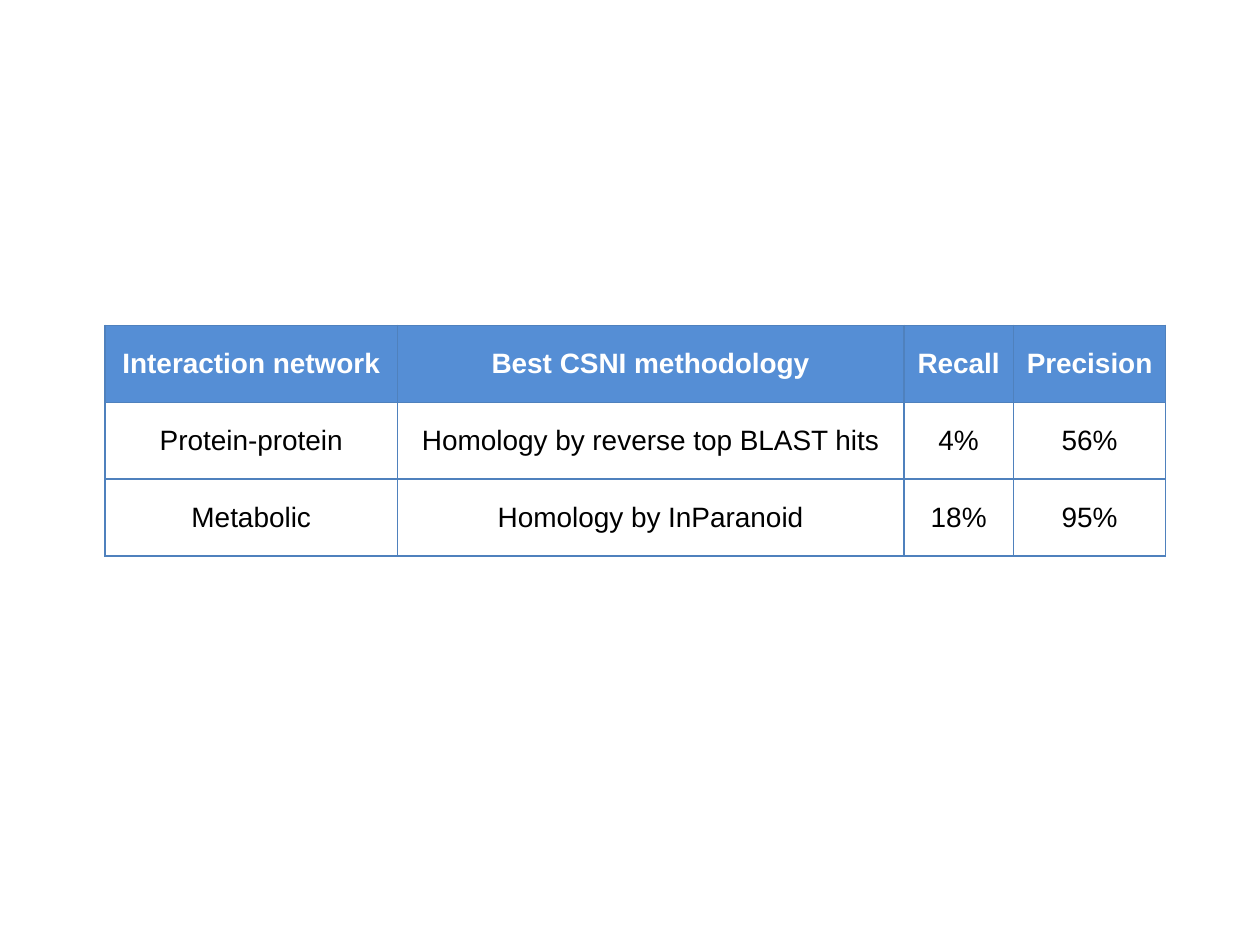
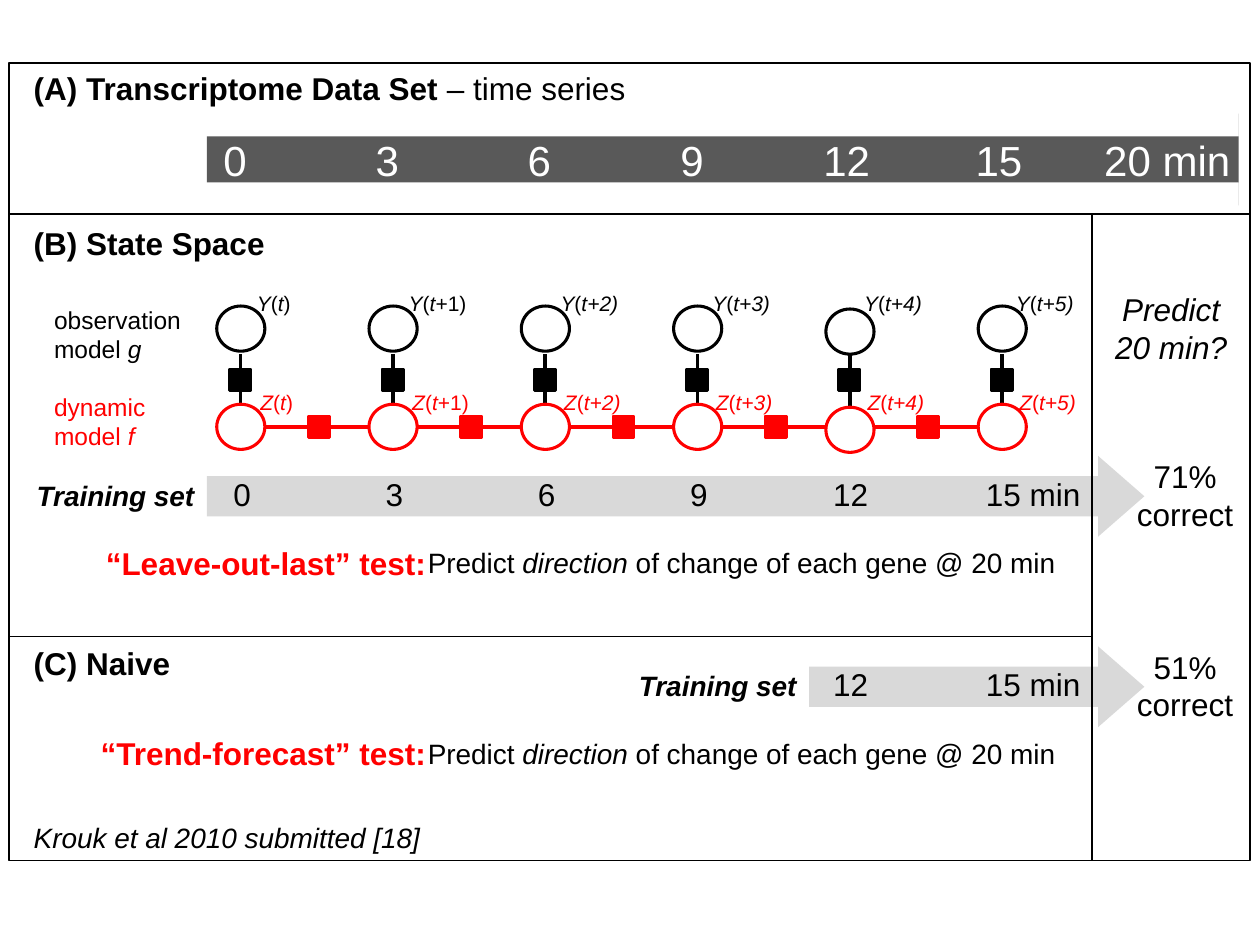
from lxml import etree
from pptx import Presentation
from pptx.dml.color import RGBColor
from pptx.enum.shapes import MSO_CONNECTOR, MSO_SHAPE
from pptx.enum.text import MSO_ANCHOR, PP_ALIGN
from pptx.oxml.ns import qn
from pptx.util import Cm, Pt

RECT, OVAL, ARROW = MSO_SHAPE.RECTANGLE, MSO_SHAPE.OVAL, MSO_SHAPE.RIGHT_ARROW
STRAIGHT = MSO_CONNECTOR.STRAIGHT
LEFT, CENTER, RIGHT = PP_ALIGN.LEFT, PP_ALIGN.CENTER, PP_ALIGN.RIGHT
MIDDLE = MSO_ANCHOR.MIDDLE

FONT = "Arial"
BLACK, WHITE, RED = "000000", "FFFFFF", "FF0000"
HEADER_BLUE, BORDER_BLUE = "558ED5", "4F81BD"
DARK_GREY, LIGHT_GREY = "595959", "D9D9D9"

RESULTS = [
    ["Interaction network", "Best CSNI methodology", "Recall", "Precision"],
    ["Protein-protein", "Homology by reverse top BLAST hits", "4%", "56%"],
    ["Metabolic", "Homology by InParanoid", "18%", "95%"],
]
COLUMN_WIDTHS = [5.89, 10.21, 2.21, 3.07]
ROW_HEIGHT = 1.55

FIRST_NODE, STEP, NODE_COUNT = 4.85, 3.07, 6
NODE_DROP = {4: 0.06}
OBSERVED_Y, HIDDEN_Y = 6.63, 8.61

SERIES_TICKS = [("0", 4.74), ("3", 7.81), ("6", 10.87), ("9", 13.95),
                ("12", 17.07), ("15", 20.14), ("20 min", 23.53)]
TRAINING_TICKS = [("0", 4.88), ("3", 7.95), ("6", 11.02), ("9", 14.09),
                  ("12", 17.15), ("15 min", 20.83)]

HEADINGS = [
    (1.27, [("(A) Transcriptome Data Set ", "b"), ("– time series", "")]),
    (4.39, [("(B) State Space", "b")]),
    (12.85, [("(C) Naive", "b")]),
]
TESTS = [
    dict(name="“Leave-out-last” test:", score="71% correct", top=9.19,
         left=4.17, ticks=TRAINING_TICKS),
    dict(name="“Trend-forecast” test:", score="51% correct", top=13.03,
         left=16.31, ticks=TRAINING_TICKS[4:]),
]
TASK = [("Predict ", ""), ("direction", "i"),
        (" of change of each gene @ 20 min", "")]
DIVIDERS = [(0.18, 4.32, 25.2, 4.32), (22.02, 4.34, 22.02, 17.35),
            (0.18, 12.83, 22.02, 12.83)]


def color(value):
    return RGBColor.from_string(value)


def write(tf, runs, size, tint=BLACK, align=LEFT):
    p = tf.paragraphs[0]
    p.alignment = align
    for text, style in runs:
        r = p.add_run()
        r.text = text
        r.font.name, r.font.size = FONT, Pt(size)
        r.font.bold, r.font.italic = "b" in style, "i" in style
        r.font.color.rgb = color(tint)
    return p


def add_text(s, x, y, w, h, runs, size, tint=BLACK, align=LEFT):
    tf = s.shapes.add_textbox(Cm(x), Cm(y), Cm(w), Cm(h)).text_frame
    tf.word_wrap = True
    write(tf, runs, size, tint, align)


def add_shape(s, kind, x, y, w, h, fill=None, line=None, weight=1):
    sp = s.shapes.add_shape(kind, Cm(x), Cm(y), Cm(w), Cm(h))
    sp.shadow.inherit = False
    if fill:
        sp.fill.solid()
        sp.fill.fore_color.rgb = color(fill)
    else:
        sp.fill.background()
    if line:
        sp.line.color.rgb = color(line)
        sp.line.width = Pt(weight)
    else:
        sp.line.fill.background()
    return sp


def add_line(s, x1, y1, x2, y2, tint=BLACK, weight=1):
    c = s.shapes.add_connector(STRAIGHT, Cm(x1), Cm(y1), Cm(x2), Cm(y2))
    c.line.color.rgb = color(tint)
    c.line.width = Pt(weight)
    etree.SubElement(c._element.spPr, qn("a:effectLst"))


def add_arrow(s, x, y, w, h, fill, head):
    sp = add_shape(s, ARROW, x, y, w, h, fill)
    sp.adjustments[0], sp.adjustments[1] = 0.5, head


def add_ticks(s, ticks, y, h, size, tint):
    for text, center in ticks:
        add_text(s, center - 1.75, y, 3.5, h, [(text, "")], size, tint, CENTER)


def add_square(s, cx, cy, tint):
    add_shape(s, RECT, cx - 0.22, cy - 0.22, 0.43, 0.43, tint, tint, 1.5)


def add_nodes(s, cy, tint):
    for i in range(NODE_COUNT):
        x = FIRST_NODE + i * STEP - 0.48
        y = cy + NODE_DROP.get(i, 0) - 0.46
        add_shape(s, OVAL, x, y, 0.97, 0.91, WHITE, tint, 1.75)


def add_node_labels(s, letter, x, y, tint):
    for i in range(NODE_COUNT):
        if i == 0:
            time = [("t", "i"), (")", "")]
        elif i == 1:
            time = [("t", "i"), ("+1)", "")]
        else:
            time = [(f"t+{i})", "i")]
        runs = [(letter, "i"), ("(", "")] + time
        add_text(s, x + i * 3.06, y, 3.18, 0.76, runs, 12, tint)


def border_cell(cell):
    tcPr = cell._tc.get_or_add_tcPr()
    for i, side in enumerate(("a:lnL", "a:lnR", "a:lnT", "a:lnB")):
        ln = etree.Element(qn(side), w=str(Pt(1)))
        fill = etree.SubElement(ln, qn("a:solidFill"))
        etree.SubElement(fill, qn("a:srgbClr"), val=BORDER_BLUE)
        tcPr.insert(i, ln)


def build_results(s):
    table = s.shapes.add_table(
        len(RESULTS), len(COLUMN_WIDTHS), Cm(2.12), Cm(6.56),
        Cm(sum(COLUMN_WIDTHS)), Cm(ROW_HEIGHT * len(RESULTS))).table
    table.horz_banding = False
    for column, width in zip(table.columns, COLUMN_WIDTHS):
        column.width = Cm(width)
    for i, row in enumerate(RESULTS):
        table.rows[i].height = Cm(ROW_HEIGHT)
        for j, text in enumerate(row):
            cell = table.cell(i, j)
            cell.vertical_anchor = MIDDLE
            cell.margin_left = cell.margin_right = Cm(0.1)
            cell.margin_top = cell.margin_bottom = Cm(0.1)
            if i == 0:
                cell.fill.solid()
                cell.fill.fore_color.rgb = color(HEADER_BLUE)
                style, tint = "b", WHITE
            else:
                cell.fill.background()
                style, tint = "", BLACK
            p = write(cell.text_frame, [(text, style)], 16, tint, CENTER)
            p.space_after = Pt(5)
            border_cell(cell)


def build_state_space(s):
    for i in range(NODE_COUNT):
        x = FIRST_NODE + i * STEP
        add_square(s, x, 7.66, BLACK)
        add_line(s, x, 7.14, x, 8.18, BLACK, 2)
    last_node = FIRST_NODE + (NODE_COUNT - 1) * STEP
    add_line(s, FIRST_NODE + 0.46, HIDDEN_Y, last_node, HIDDEN_Y, RED, 2)
    for i in range(NODE_COUNT - 1):
        add_square(s, FIRST_NODE + (i + 0.5) * STEP + 0.05, HIDDEN_Y, RED)
    add_nodes(s, HIDDEN_Y, RED)
    add_node_labels(s, "Z", 5.0, 7.72, RED)
    add_node_labels(s, "Y", 4.93, 5.74, BLACK)
    add_nodes(s, OBSERVED_Y, BLACK)
    add_text(s, 0.84, 6.02, 3.61, 1.45,
             [("observation model ", ""), ("g", "i")], 14)
    add_text(s, 0.84, 7.77, 3.18, 1.45,
             [("dynamic model ", ""), ("f", "i")], 14, RED)


def build_test(s, test):
    top, left = test["top"], test["left"]
    add_arrow(s, left, top, 23.07 - left, 1.63, LIGHT_GREY, 0.573)
    add_ticks(s, test["ticks"], top + 0.26, 1.02, 18, BLACK)
    add_text(s, left - 4.1, top + 0.33, 4.1, 0.94,
             [("Training set", "bi")], 16, BLACK, RIGHT)
    add_text(s, 0.84, top + 1.65, 8, 1.02,
             [(test["name"], "b")], 18, RED, RIGHT)
    add_text(s, 7.7, top + 1.69, 14.5, 0.94, TASK, 16, BLACK, CENTER)
    add_text(s, 22.58, top - 0.1, 2.62, 1.8,
             [(test["score"], "")], 18, BLACK, CENTER)


def build_forecast(s):
    add_arrow(s, 4.17, 2.29, 20.8, 1.85, DARK_GREY, 0)
    add_ticks(s, SERIES_TICKS, 2.59, 1.3, 24, WHITE)
    for y, runs in HEADINGS:
        add_text(s, 0.43, y, 15, 1.02, runs, 18)
    build_state_space(s)
    for test in TESTS:
        build_test(s, test)
    add_text(s, 22.02, 5.72, 3.18, 1.8,
             [("Predict 20 min?", "i")], 18, BLACK, CENTER)
    add_text(s, 0.43, 16.41, 12.7, 0.94,
             [("Krouk et al 2010 submitted [18]", "i")], 16)
    add_shape(s, RECT, 0.18, 1.27, 25.02, 16.08, None, BLACK, 0.75)
    for ends in DIVIDERS:
        add_line(s, *ends)


def main():
    prs = Presentation()
    prs.slide_width, prs.slide_height = Cm(25.4), Cm(19.05)
    for build in (build_results, build_forecast):
        build(prs.slides.add_slide(prs.slide_layouts[6]))
    prs.save("out.pptx")


if __name__ == "__main__":
    main()
